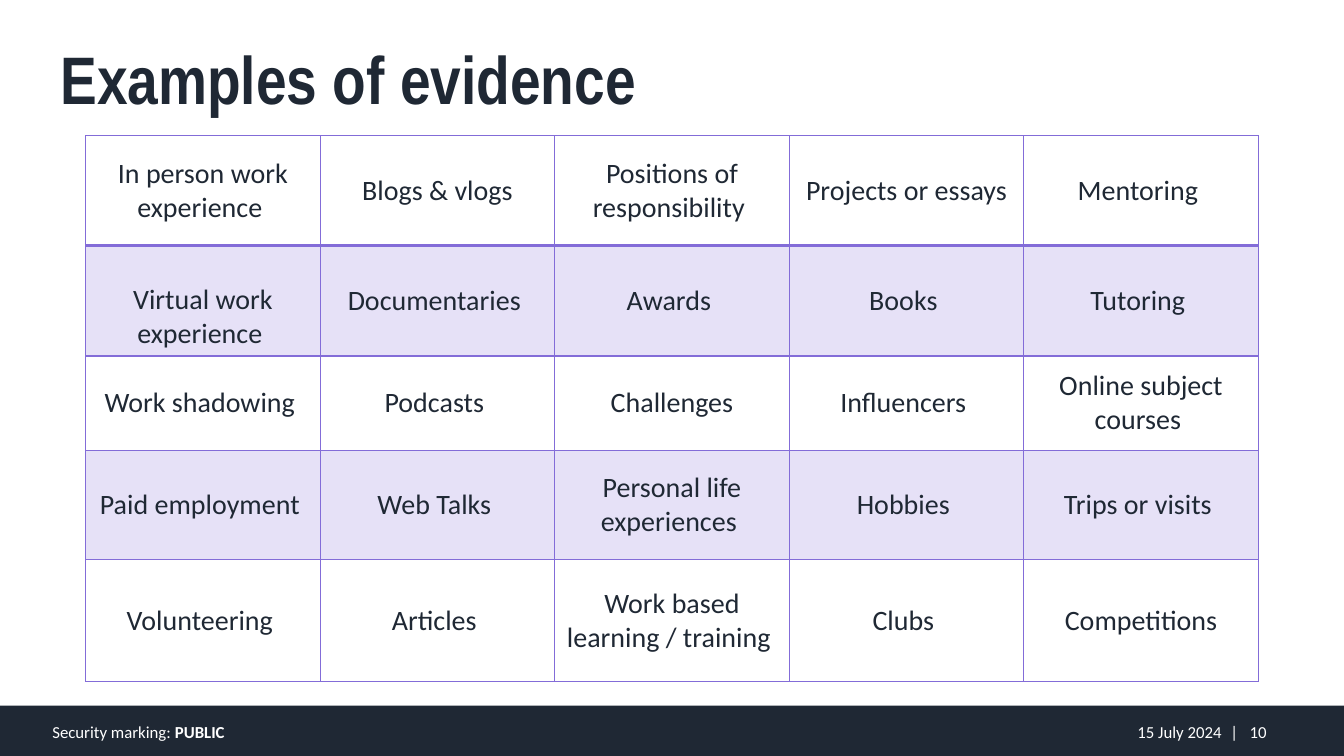
from dataclasses import dataclass

from lxml.etree import SubElement
from pptx import Presentation
from pptx.dml.color import RGBColor
from pptx.enum.shapes import MSO_SHAPE
from pptx.enum.text import MSO_ANCHOR, MSO_AUTO_SIZE, PP_ALIGN
from pptx.oxml.ns import qn
from pptx.util import Cm, Pt


@dataclass(frozen=True)
class Theme:
    navy: str = "1F2834"
    purple: str = "836CD8"
    white: str = "FFFFFF"
    heading_font: str = "Arial Narrow"
    body_font: str = "Calibri"
    title_size: int = 48
    cell_size: int = 20
    footer_size: int = 12
    band_opacity: int = 20
    border_width: int = 1
    header_border_width: int = 2


THEME = Theme()

EVIDENCE = [
    ["In person work experience ", "Blogs & vlogs", "Positions of responsibility ",
     "Projects or essays", "Mentoring "],
    ["Virtual work experience ", "Documentaries ", "Awards ", "Books ", "Tutoring "],
    ["Work shadowing ", "Podcasts ", "Challenges", "Influencers ",
     "Online subject courses "],
    ["Paid employment ", "Web Talks ", "Personal life experiences ", "Hobbies ",
     "Trips or visits "],
    ["Volunteering ", "Articles ", "Work based learning / training ", "Clubs ",
     "Competitions"],
]
ROW_HEIGHTS = [2.77, 2.78, 2.38, 2.75, 3.08]
COLUMN_WIDTH = 5.91


def format_font(font, name, size, color, bold=False):
    font.name = name
    font.size = Pt(size)
    font.bold = bold
    font.color.rgb = RGBColor.from_string(color)


def add_title(slide, text):
    title = slide.shapes.title
    title.left, title.top, title.width, title.height = Cm(1.27), Cm(0.81), Cm(24.36), Cm(2.31)
    frame = title.text_frame
    frame.text = text
    frame.auto_size = MSO_AUTO_SIZE.NONE
    frame.vertical_anchor = MSO_ANCHOR.TOP
    paragraph = frame.paragraphs[0]
    paragraph.alignment = PP_ALIGN.LEFT
    paragraph.line_spacing = 1.0
    format_font(paragraph.runs[0].font, THEME.heading_font, THEME.title_size,
                THEME.navy, bold=True)


def add_footer_bar(slide, presentation):
    height = Cm(1.27)
    bar = slide.shapes.add_shape(MSO_SHAPE.RECTANGLE, 0, presentation.slide_height - height,
                                 presentation.slide_width, height)
    bar.shadow.inherit = False
    bar.fill.solid()
    bar.fill.fore_color.rgb = RGBColor.from_string(THEME.navy)
    bar.line.fill.background()


def add_footer_text(slide, left, width, text, bold_text="", alignment=PP_ALIGN.LEFT,
                    right_inset=0.25, tab_position=None):
    box = slide.shapes.add_textbox(Cm(left), Cm(18.01), Cm(width), Cm(0.85))
    frame = box.text_frame
    frame.word_wrap = True
    frame.vertical_anchor = MSO_ANCHOR.MIDDLE
    frame.margin_right = Cm(right_inset)
    paragraph = frame.paragraphs[0]
    paragraph.text = text
    paragraph.alignment = alignment
    if tab_position:
        tab_list = SubElement(paragraph._p.get_or_add_pPr(), qn("a:tabLst"))
        SubElement(tab_list, qn("a:tab"), pos=str(Cm(tab_position)), algn="l")
    if bold_text:
        paragraph.add_run().text = bold_text
    for run in paragraph.runs:
        format_font(run.font, THEME.body_font, THEME.footer_size, THEME.white,
                    bold=run.text == bold_text)


def set_cell_borders(cell, bottom_width):
    properties = cell._tc.get_or_add_tcPr()
    for side in ("L", "R", "T", "B"):
        width = bottom_width if side == "B" else THEME.border_width
        line = SubElement(properties, qn(f"a:ln{side}"), w=str(Pt(width)))
        fill = SubElement(line, qn("a:solidFill"))
        SubElement(fill, qn("a:srgbClr"), val=THEME.purple)


def set_cell_fill(cell, banded):
    if not banded:
        cell.fill.background()
        return
    cell.fill.solid()
    cell.fill.fore_color.rgb = RGBColor.from_string(THEME.purple)
    color = cell._tc.tcPr.find(qn("a:solidFill")).find(qn("a:srgbClr"))
    SubElement(color, qn("a:alpha"), val=str(THEME.band_opacity * 1000))


def fill_cell(cell, text, banded, bottom_width):
    cell.text_frame.text = text
    cell.vertical_anchor = MSO_ANCHOR.MIDDLE
    paragraph = cell.text_frame.paragraphs[0]
    paragraph.alignment = PP_ALIGN.CENTER
    format_font(paragraph.runs[0].font, THEME.body_font, THEME.cell_size, THEME.navy)
    set_cell_borders(cell, bottom_width)
    set_cell_fill(cell, banded)


def add_evidence_table(slide):
    column_count = len(EVIDENCE[0])
    table = slide.shapes.add_table(
        len(EVIDENCE), column_count, Cm(2.16), Cm(3.42),
        Cm(COLUMN_WIDTH * column_count), Cm(sum(ROW_HEIGHTS))).table
    table.first_row = False
    table.horz_banding = False
    for column in table.columns:
        column.width = Cm(COLUMN_WIDTH)
    for row_index, (texts, height) in enumerate(zip(EVIDENCE, ROW_HEIGHTS)):
        table.rows[row_index].height = Cm(height)
        bottom_width = THEME.border_width if row_index else THEME.header_border_width
        for column_index, text in enumerate(texts):
            fill_cell(table.cell(row_index, column_index), text,
                      row_index % 2 == 1, bottom_width)
    table.cell(1, 0).vertical_anchor = MSO_ANCHOR.BOTTOM


def main():
    presentation = Presentation()
    presentation.slide_width = Cm(33.87)
    presentation.slide_height = Cm(19.05)
    slide = presentation.slides.add_slide(presentation.slide_layouts[5])
    add_footer_bar(slide, presentation)
    add_footer_text(slide, 22.1, 8.69, "15 July 2024", alignment=PP_ALIGN.RIGHT, right_inset=0)
    add_footer_text(slide, 30.76, 2.03, "|\t10", tab_position=0.48)
    add_footer_text(slide, 1.07, 16.61, "Security marking: ", bold_text="PUBLIC")
    add_evidence_table(slide)
    add_title(slide, "Examples of evidence")
    presentation.save("out.pptx")


if __name__ == "__main__":
    main()
